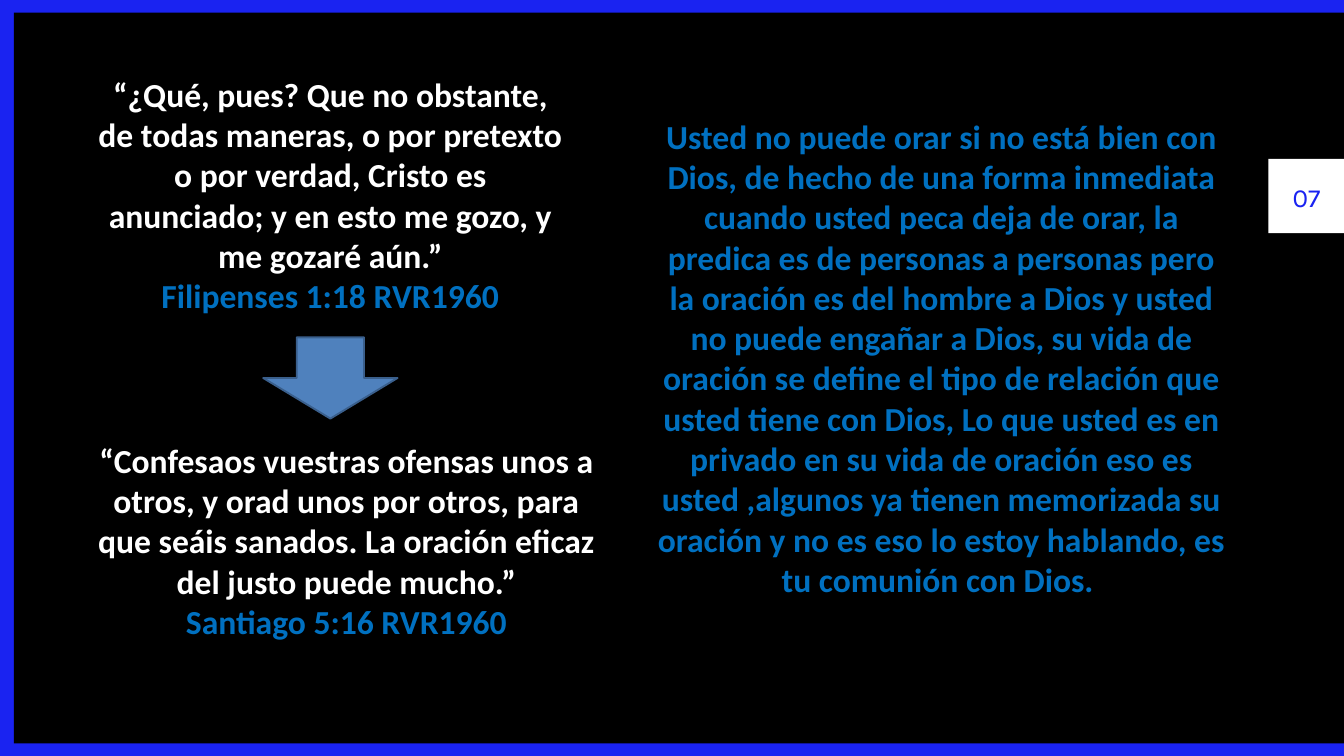
from typing import NamedTuple

from pptx import Presentation
from pptx.dml.color import RGBColor
from pptx.enum.shapes import MSO_SHAPE
from pptx.enum.text import PP_ALIGN
from pptx.util import Pt

RECTANGLE = MSO_SHAPE.RECTANGLE
DOWN_ARROW = MSO_SHAPE.DOWN_ARROW
CENTER = PP_ALIGN.CENTER

EMU_PER_PX = 9525
BLANK_LAYOUT = 6
SIDE_INSET = 10
TOP_INSET = 5

COLORS = {
    "frame": "1A23F1",
    "panel": "000000",
    "white": "FFFFFF",
    "accent": "0070C0",
    "arrow": "4F81BD",
    "arrow_edge": "3A5F8C",
}


class Area(NamedTuple):
    left: int
    top: int
    width: int
    height: int


class Line(NamedTuple):
    text: str
    color: str
    size: int = 36
    font: str = "Calibri"
    bold: bool = True
    spacing: float | None = None


class TextBlock(NamedTuple):
    area: Area
    lines: list[Line]
    side_inset: int = SIDE_INSET
    top_inset: int = TOP_INSET


class Figure(NamedTuple):
    kind: MSO_SHAPE
    area: Area
    fill: str
    edge: str | None = None


FIGURES = [
    Figure(RECTANGLE, Area(20, 18, 1900, 1044), "panel"),
    Figure(RECTANGLE, Area(1812, 227, 108, 106), "white"),
    Figure(DOWN_ARROW, Area(376, 482, 192, 116), "arrow", "arrow_edge"),
]

TEXT_BLOCKS = [
    TextBlock(
        Area(1841, 252, 51, 49),
        [Line("07", "frame", 28, "Karla", False, 39.2)],
        side_inset=0,
        top_inset=0,
    ),
    TextBlock(
        Area(128, 71, 688, 417),
        [
            Line(
                "“¿Qué, pues? Que no obstante, de todas maneras, o por pretexto "
                "o por verdad, Cristo es anunciado; y en esto me gozo, y me "
                "gozaré aún.”",
                "white",
            ),
            Line("Filipenses 1:18 RVR1960", "accent"),
        ],
        top_inset=34,
    ),
    TextBlock(
        Area(924, 160, 842, 759),
        [
            Line(
                "Usted no puede orar si no está bien con Dios, de hecho de una "
                "forma inmediata cuando usted peca deja de orar, la predica es "
                "de personas a personas pero la oración es del hombre a Dios y "
                "usted no puede engañar a Dios, su vida de oración se define el "
                "tipo de relación que usted tiene con Dios, Lo que usted es en "
                "privado en su vida de oración eso es usted ,algunos ya tienen "
                "memorizada su oración y no es eso lo estoy hablando, es tu "
                "comunión con Dios. ",
                "accent",
            )
        ],
    ),
    TextBlock(
        Area(120, 566, 750, 417),
        [
            Line(
                "“Confesaos vuestras ofensas unos a otros, y orad unos por "
                "otros, para que seáis sanados. La oración eficaz del justo "
                "puede mucho.”",
                "white",
            ),
            Line("Santiago 5:16 RVR1960", "accent"),
        ],
        top_inset=62,
    ),
]


def px(length: int) -> int:
    return length * EMU_PER_PX


def rgb(name: str) -> RGBColor:
    return RGBColor.from_string(COLORS[name])


def draw_figure(page, figure: Figure) -> None:
    shape = page.shapes.add_shape(figure.kind, *map(px, figure.area))
    shape.shadow.inherit = False
    shape.fill.solid()
    shape.fill.fore_color.rgb = rgb(figure.fill)
    if figure.edge:
        shape.line.color.rgb = rgb(figure.edge)
        shape.line.width = Pt(2)
    else:
        shape.line.fill.background()


def draw_text(page, block: TextBlock) -> None:
    box = page.shapes.add_textbox(*map(px, block.area))
    frame = box.text_frame
    frame.word_wrap = True
    frame.margin_left = frame.margin_right = px(block.side_inset)
    frame.margin_top = px(block.top_inset)
    frame.margin_bottom = 0
    for index, line in enumerate(block.lines):
        para = frame.add_paragraph() if index else frame.paragraphs[0]
        para.text = line.text
        para.alignment = CENTER
        if line.spacing:
            para.line_spacing = Pt(line.spacing)
        para.font.name = line.font
        para.font.size = Pt(line.size)
        para.font.bold = line.bold
        para.font.color.rgb = rgb(line.color)


def main() -> None:
    deck = Presentation()
    deck.slide_width = px(1920)
    deck.slide_height = px(1080)
    page = deck.slides.add_slide(deck.slide_layouts[BLANK_LAYOUT])
    page.background.fill.solid()
    page.background.fill.fore_color.rgb = rgb("frame")
    for figure in FIGURES:
        draw_figure(page, figure)
    for block in TEXT_BLOCKS:
        draw_text(page, block)
    deck.save("out.pptx")


if __name__ == "__main__":
    main()
